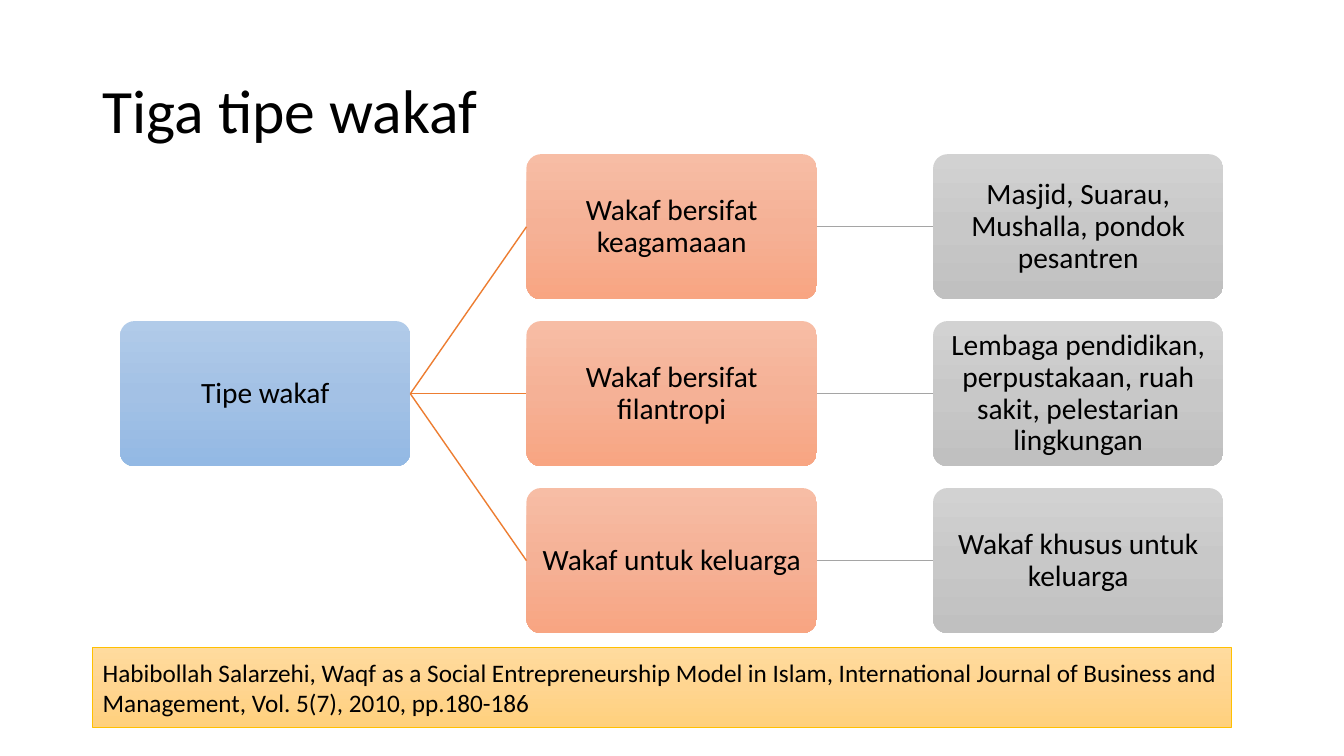
from copy import deepcopy
from dataclasses import dataclass

from pptx import Presentation
from pptx.dml.color import RGBColor
from pptx.enum.shapes import MSO_CONNECTOR, MSO_SHAPE
from pptx.enum.text import MSO_ANCHOR, PP_ALIGN
from pptx.oxml.ns import qn
from pptx.util import Inches, Pt
from lxml import etree

ROUNDED, RECTANGLE = MSO_SHAPE.ROUNDED_RECTANGLE, MSO_SHAPE.RECTANGLE
STRAIGHT = MSO_CONNECTOR.STRAIGHT
MIDDLE = MSO_ANCHOR.MIDDLE
LEFT, CENTER = PP_ALIGN.LEFT, PP_ALIGN.CENTER
LEFT_SITE, RIGHT_SITE = 1, 3  # connection sites of a rounded rectangle


@dataclass(frozen=True)
class Theme:
    font: str = "Calibri"
    text: str = "000000"
    title_size: int = 44
    node_size: int = 21
    source_size: int = 18
    root_fill: tuple = ("B1CBE9", "A3C1E5", "93B9E4")
    type_fill: tuple = ("F7BDA5", "F5B196", "F8A582")
    example_fill: tuple = ("D2D2D2", "C8C8C8", "C0C0C0")
    source_fill: tuple = ("FFDB9E", "FFD590", "FFD07C")
    source_border: str = "FFC000"
    type_line: str = "ED7D31"
    example_line: str = "A5A5A5"


THEME = Theme()

# Tree grid, in inches: gaps are shares of the node size
TREE_LEFT, TREE_TOP = 1.19, 1.53
NODE_WIDTH = 2.88
NODE_HEIGHT = NODE_WIDTH / 2
COLUMN_STEP = NODE_WIDTH * 1.4
ROW_STEP = NODE_HEIGHT * 1.15

WAQF_TYPES = [
    ("Wakaf bersifat keagamaaan", "Masjid, Suarau, Mushalla, pondok pesantren"),
    ("Wakaf bersifat filantropi",
     "Lembaga pendidikan, perpustakaan, ruah sakit, pelestarian lingkungan"),
    ("Wakaf untuk keluarga", "Wakaf khusus untuk keluarga"),
]
SOURCE = ("Habibollah Salarzehi, Waqf as a Social Entrepreneurship Model in Islam, "
          "International Journal of Business and Management, Vol. 5(7), 2010, pp.180-186")


def write(shape, text, size, align=LEFT, spacing=1.0):
    frame = shape.text_frame
    frame.word_wrap = True
    frame.vertical_anchor = MIDDLE
    paragraph = frame.paragraphs[0]
    paragraph.alignment = align
    paragraph.line_spacing = spacing
    run = paragraph.add_run()
    run.text = text
    run.font.name = THEME.font
    run.font.size = Pt(size)
    run.font.color.rgb = RGBColor.from_string(THEME.text)


def fill_gradient(shape, colours):
    """Fill from top to bottom with three evenly spaced colours."""
    shape.fill.gradient()
    shape.fill.gradient_angle = 270
    stop_list = shape._element.spPr.find(qn("a:gradFill")).find(qn("a:gsLst"))
    stop_list.insert(1, deepcopy(stop_list[0]))
    for index, (stop, colour) in enumerate(zip(shape.fill.gradient_stops, colours)):
        stop.position = index / 2
        stop.color.rgb = RGBColor.from_string(colour)


def add_title(slide, text):
    title = slide.shapes.add_textbox(Inches(0.92), Inches(0.4), Inches(11.5), Inches(1.45))
    write(title, text, THEME.title_size, spacing=0.9)


def add_node(slide, column, row, text, colours):
    node = slide.shapes.add_shape(
        ROUNDED,
        Inches(TREE_LEFT + column * COLUMN_STEP), Inches(TREE_TOP + row * ROW_STEP),
        Inches(NODE_WIDTH), Inches(NODE_HEIGHT))
    node.adjustments[0] = 0.1
    node.shadow.inherit = False
    fill_gradient(node, colours)
    node.line.fill.background()
    frame = node.text_frame
    frame.margin_left = frame.margin_right = Inches(0.05)
    frame.margin_top = frame.margin_bottom = Inches(0.05)
    write(node, text, THEME.node_size, CENTER, spacing=0.9)
    return node


def add_branch(slide, parent, child, colour):
    branch = slide.shapes.add_connector(STRAIGHT, 0, 0, 0, 0)
    branch.begin_connect(parent, RIGHT_SITE)
    branch.end_connect(child, LEFT_SITE)
    branch.line.color.rgb = RGBColor.from_string(colour)
    branch.line.width = Pt(1)
    etree.SubElement(branch._element.spPr, qn("a:effectLst"))


def add_source(slide, text):
    source = slide.shapes.add_shape(
        RECTANGLE, Inches(0.92), Inches(6.42), Inches(11.29), Inches(0.8))
    source.shadow.inherit = False
    fill_gradient(source, THEME.source_fill)
    source.line.color.rgb = RGBColor.from_string(THEME.source_border)
    source.line.width = Pt(0.5)
    write(source, text, THEME.source_size)


def main():
    deck = Presentation()
    deck.slide_width, deck.slide_height = Inches(13.33), Inches(7.5)
    slide = deck.slides.add_slide(deck.slide_layouts[6])

    add_title(slide, "Tiga tipe wakaf")

    # Tree: root, types of waqf, examples of each type
    root = add_node(slide, 0, 1, "Tipe wakaf", THEME.root_fill)
    for row, (type_text, example_text) in enumerate(WAQF_TYPES):
        waqf_type = add_node(slide, 1, row, type_text, THEME.type_fill)
        example = add_node(slide, 2, row, example_text, THEME.example_fill)
        add_branch(slide, root, waqf_type, THEME.type_line)
        add_branch(slide, waqf_type, example, THEME.example_line)

    # Reference below the tree
    add_source(slide, SOURCE)
    deck.save("out.pptx")


if __name__ == "__main__":
    main()
